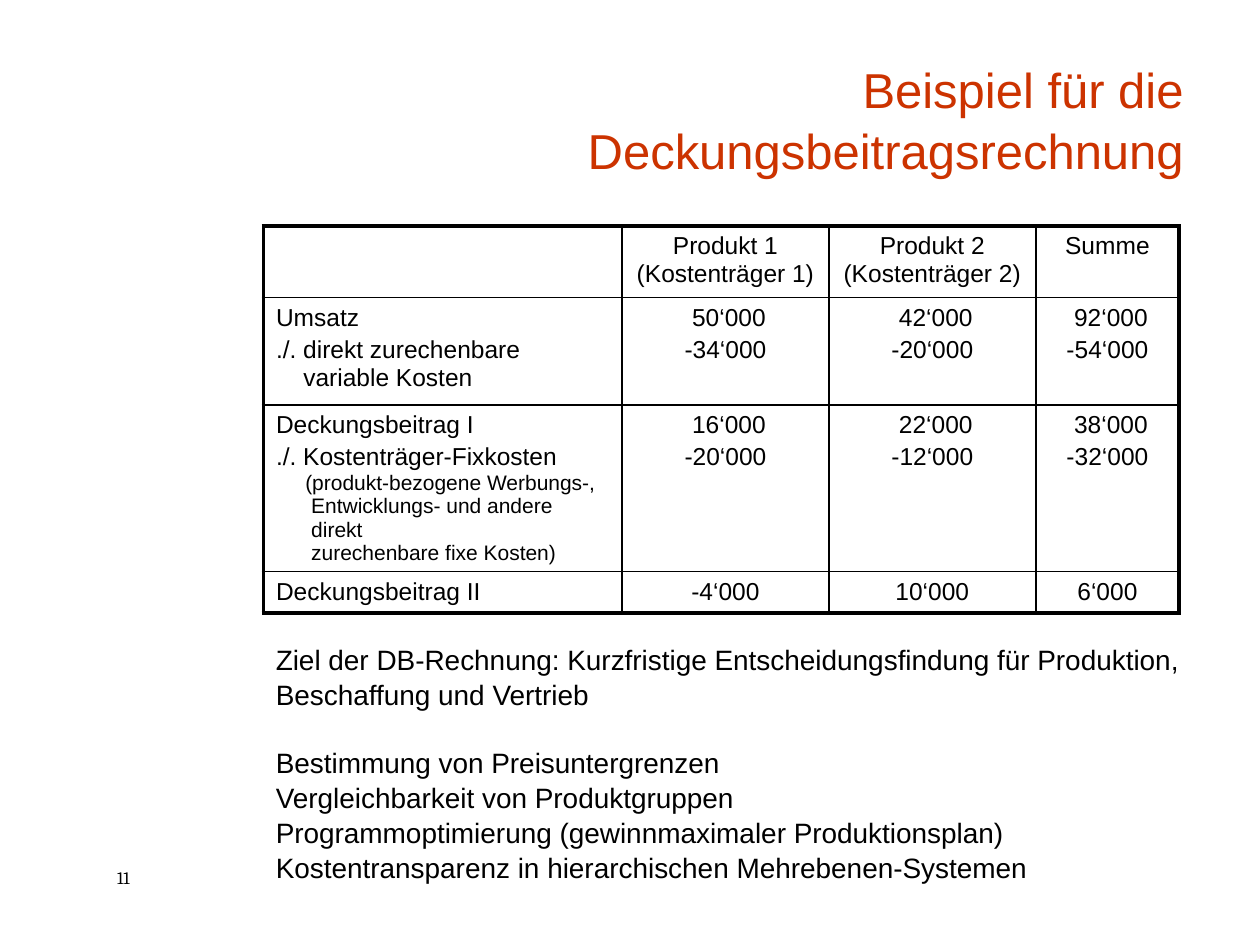
from lxml import etree
from pptx import Presentation
from pptx.dml.color import RGBColor
from pptx.enum.text import MSO_ANCHOR, MSO_AUTO_SIZE, PP_ALIGN
from pptx.oxml.ns import qn
from pptx.util import Cm, Pt

LEFT, CENTER, RIGHT = PP_ALIGN.LEFT, PP_ALIGN.CENTER, PP_ALIGN.RIGHT
BOTTOM = MSO_ANCHOR.BOTTOM
NO_AUTOFIT = MSO_AUTO_SIZE.NONE
TITLE_ONLY = 5
COLORS = {"title": "CC3300", "text": "000000", "border": "000000"}
THIN, THICK = Pt(1), Pt(2.25)
DIGIT_SHIFT = 0.14  # moves unsigned figures under signed ones
LEFT_EDGE = 5.31


class SlideBuilder:
    """Holds the style and the current slide."""

    font_name = "Arial"

    def __init__(self, presentation):
        self.slide = presentation.slides.add_slide(
            presentation.slide_layouts[TITLE_ONLY])

    def format(self, paragraph, size, color="text", align=LEFT,
               font_name=None, margin=0, indent=0, before=0, spacing=None):
        properties = paragraph._p.get_or_add_pPr()
        properties.set("marL", str(Cm(margin)))
        properties.set("indent", str(Cm(indent)))
        paragraph.alignment = align
        paragraph.space_before = Pt(before)
        paragraph.line_spacing = spacing
        paragraph.font.size = Pt(size)
        paragraph.font.name = font_name or self.font_name
        paragraph.font.color.rgb = RGBColor.from_string(COLORS[color])

    def fill_text(self, frame, items):
        """Write (text, format options) pairs as paragraphs."""
        for index, (text, options) in enumerate(items):
            paragraph = frame.paragraphs[0] if index == 0 else frame.add_paragraph()
            paragraph.text = text
            self.format(paragraph, **options)

    def title(self, text, left, top, width, height):
        shape = self.slide.shapes.title
        shape.left, shape.top = Cm(left), Cm(top)
        shape.width, shape.height = Cm(width), Cm(height)
        frame = shape.text_frame
        frame.auto_size = NO_AUTOFIT
        frame.word_wrap = True
        frame.vertical_anchor = BOTTOM
        self.fill_text(frame, [(text, dict(size=28, color="title", align=RIGHT,
                                           spacing=1.04))])

    def text_box(self, items, left, top, width, height):
        shape = self.slide.shapes.add_textbox(
            Cm(left), Cm(top), Cm(width), Cm(height))
        shape.text_frame.word_wrap = True
        self.fill_text(shape.text_frame, items)

    def border(self, cell, side, width):
        line = etree.SubElement(cell._tc.get_or_add_tcPr(), qn(f"a:ln{side}"),
                                w=str(width))
        fill = etree.SubElement(line, qn("a:solidFill"))
        etree.SubElement(fill, qn("a:srgbClr"), val=COLORS["border"])

    def table(self, rows, left, top, widths, heights):
        frame = self.slide.shapes.add_table(
            len(heights), len(widths), Cm(left), Cm(top),
            Cm(sum(widths)), Cm(sum(heights)))
        table = frame.table
        table.first_row = table.horz_banding = False
        for column, width in zip(table.columns, widths):
            column.width = Cm(width)
        for row, height in zip(table.rows, heights):
            row.height = Cm(height)
        last_row, last_column = len(heights) - 1, len(widths) - 1
        for r, row in enumerate(rows):
            for c, items in enumerate(row):
                cell = table.cell(r, c)
                self.fill_text(cell.text_frame, items)
                outer = {"L": c == 0, "R": c == last_column,
                         "T": r == 0, "B": r == last_row}
                for side, is_outer in outer.items():
                    self.border(cell, side, THICK if is_outer else THIN)
                cell.fill.background()


def label(text, **options):
    return text, {"size": 14, **options}


def header(text):
    return [label(text, align=CENTER)]


def figures(first, second):
    return [label(first, align=CENTER, margin=DIGIT_SHIFT),
            label(second, align=CENTER, before=2.8)]


def main():
    presentation = Presentation()
    presentation.slide_width, presentation.slide_height = Cm(25.4), Cm(19.05)
    builder = SlideBuilder(presentation)

    # Title
    builder.title("Beispiel für die Deckungsbeitragsrechnung",
                  LEFT_EDGE, 1.07, 18.8, 2.67)

    # Contribution margin table
    deduction = dict(margin=0.55, indent=-0.55, before=2.8)
    rows = [
        [header(text) for text in (
            "", "Produkt 1\v(Kostenträger 1)",
            "Produkt 2 (Kostenträger 2)", "Summe")],
        [[label("Umsatz"),
          label("./. direkt zurechenbare\vvariable Kosten", **deduction)],
         figures("50‘000", "-34‘000"),
         figures("42‘000", "-20‘000"),
         figures("92‘000", "-54‘000")],
        [[label("Deckungsbeitrag I"),
          label("./. Kostenträger-Fixkosten", **deduction),
          label("(produkt-bezogene Werbungs-,\v"
                "Entwicklungs- und andere direkt\v"
                "zurechenbare fixe Kosten)",
                size=12, margin=0.71, indent=-0.12)],
         figures("16‘000", "-20‘000"),
         figures("22‘000", "-12‘000"),
         figures("38‘000", "-32‘000")],
        [[label("Deckungsbeitrag II")],
         *[header(text) for text in ("-4‘000", "10‘000", "6‘000")]],
    ]
    builder.table(rows, LEFT_EDGE, 4.56, widths=[7.23, 4.17, 4.17, 2.89],
                  heights=[1.44, 2.16, 3.08, 0.84])

    # Purpose of the calculation
    body = dict(size=16, spacing=1.04)
    builder.text_box([
        ("Ziel der DB-Rechnung: Kurzfristige Entscheidungsfindung für Produktion,\v"
         "Beschaffung und Vertrieb", body),
        ("Bestimmung von Preisuntergrenzen", {**body, "before": 19.2}),
        ("Vergleichbarkeit von Produktgruppen", body),
        ("Programmoptimierung (gewinnmaximaler Produktionsplan)", body),
        ("Kostentransparenz in hierarchischen Mehrebenen-Systemen", body),
    ], LEFT_EDGE, 12.8, 18.8, 5)

    # Page number
    builder.text_box([("11", dict(size=10, font_name="Cambria"))],
                     2.11, 17.35, 1.7, 0.69)

    presentation.save("out.pptx")


if __name__ == "__main__":
    main()
